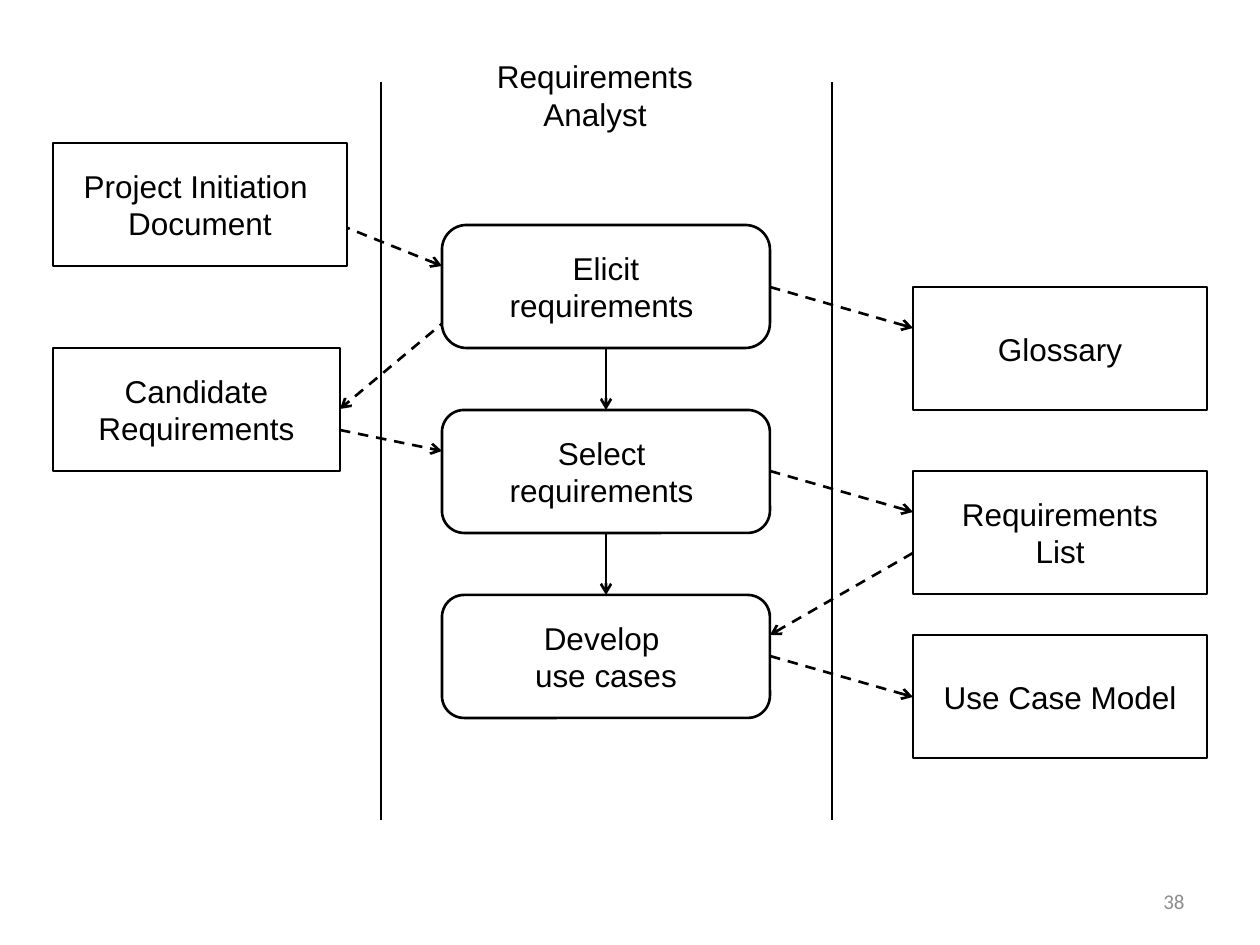
from pptx import Presentation
from pptx.dml.color import RGBColor
from pptx.enum.dml import MSO_LINE_DASH_STYLE as DASH
from pptx.enum.shapes import MSO_CONNECTOR, MSO_SHAPE
from pptx.enum.text import MSO_ANCHOR, PP_ALIGN
from pptx.oxml.ns import qn
from pptx.util import Inches, Pt
from lxml.etree import SubElement

COLORS = {"ink": "000000", "paper": "FFFFFF", "page number": "8C8C8C"}
PX = Inches(1) / 126

presentation = Presentation()
presentation.slide_width, presentation.slide_height = Inches(10), Inches(7.5)
slide = presentation.slides.add_slide(presentation.slide_layouts[6])
shapes = slide.shapes


def color(name):
    return RGBColor.from_string(COLORS[name])


def write(shape, text, size=18, font="Arial", ink="ink", align=PP_ALIGN.CENTER,
          anchor=MSO_ANCHOR.MIDDLE):
    """Fill a shape with text, one paragraph for each line."""
    frame = shape.text_frame
    frame.text = text
    frame.word_wrap = False
    frame.vertical_anchor = anchor
    for paragraph in frame.paragraphs:
        paragraph.alignment = align
        for run in paragraph.runs:
            run.font.size = Pt(size)
            run.font.name = font
            run.font.color.rgb = color(ink)


# Geometry in px
BOX_HEIGHT = 123
STEP_LEFT, STEP_WIDTH, STEP_TOP, STEP_PITCH = 442, 328, 225, 185
STEP_RIGHT = STEP_LEFT + STEP_WIDTH
STEP_CENTER = STEP_LEFT + STEP_WIDTH // 2
INPUT_LEFT, OUTPUT_LEFT, DOCUMENT_WIDTH = 53, 913, 294
CANDIDATE_WIDTH = 287
CANDIDATE_RIGHT = INPUT_LEFT + CANDIDATE_WIDTH

steps = ["Elicit\nrequirements ", "Select \nrequirements ", "Develop \nuse cases"]
step_tops = [STEP_TOP + STEP_PITCH * i for i in range(len(steps))]

# Lines: start x, start y, end x, end y, dashed, arrowhead
lines = [(x, 82, x, 820, False, False) for x in (381, 832)]
lines += [(STEP_CENTER, top + BOX_HEIGHT, STEP_CENTER, below, False, True)
          for top, below in zip(step_tops, step_tops[1:])]
lines += [(*ends, True, True) for ends in (
    (CANDIDATE_RIGHT, 225, STEP_LEFT, 266),
    (462, 307, CANDIDATE_RIGHT, 409),
    (CANDIDATE_RIGHT, 430, STEP_LEFT, 451),
    (STEP_RIGHT, 287, OUTPUT_LEFT, 328),
    (STEP_RIGHT, 471, OUTPUT_LEFT, 512),
    (OUTPUT_LEFT, 553, STEP_RIGHT, 635),
    (STEP_RIGHT, 656, OUTPUT_LEFT, 697),
)]
for *ends, dashed, arrow in lines:
    connector = shapes.add_connector(
        MSO_CONNECTOR.STRAIGHT, *(round(value * PX) for value in ends))
    connector.line.color.rgb = color("ink")
    connector.line.width = Pt(1.5)
    if dashed:
        connector.line.dash_style = DASH.DASH
    if arrow:
        SubElement(connector.line._get_or_add_ln(), qn("a:tailEnd"), type="arrow")
    SubElement(connector._element.spPr, qn("a:effectLst"))

# Boxes: text, left, top, width, corner radius
boxes = [
    ("Project Initiation \nDocument", INPUT_LEFT, 143, DOCUMENT_WIDTH, 0),
    ("Candidate\nRequirements", INPUT_LEFT, 348, CANDIDATE_WIDTH, 0),
    ("Glossary", OUTPUT_LEFT, 287, DOCUMENT_WIDTH, 0),
    ("Requirements\nList", OUTPUT_LEFT, 471, DOCUMENT_WIDTH, 0),
    ("Use Case Model", OUTPUT_LEFT, 635, DOCUMENT_WIDTH, 0),
]
boxes += [(text, STEP_LEFT, top, STEP_WIDTH, radius)
          for text, top, radius in zip(steps, step_tops, (0.2, 0.18, 0.18))]
for text, left, top, width, radius in boxes:
    kind = MSO_SHAPE.ROUNDED_RECTANGLE if radius else MSO_SHAPE.RECTANGLE
    box = shapes.add_shape(
        kind, *(round(value * PX) for value in (left, top, width, BOX_HEIGHT)))
    if radius:
        box.adjustments[0] = radius
    box.shadow.inherit = False
    box.fill.solid()
    box.fill.fore_color.rgb = color("paper")
    box.line.color.rgb = color("ink")
    box.line.width = Pt(1.5)
    write(box, text)

role = shapes.add_textbox(*(round(value * PX) for value in (484, 51, 222, 88)))
write(role, "Requirements\nAnalyst", anchor=MSO_ANCHOR.TOP)

page_number = shapes.add_textbox(*(round(value * PX) for value in (903, 876, 294, 50)))
write(page_number, "38", 12, "Calibri", "page number", PP_ALIGN.RIGHT)
page_number.text_frame.word_wrap = True

presentation.save("out.pptx")
